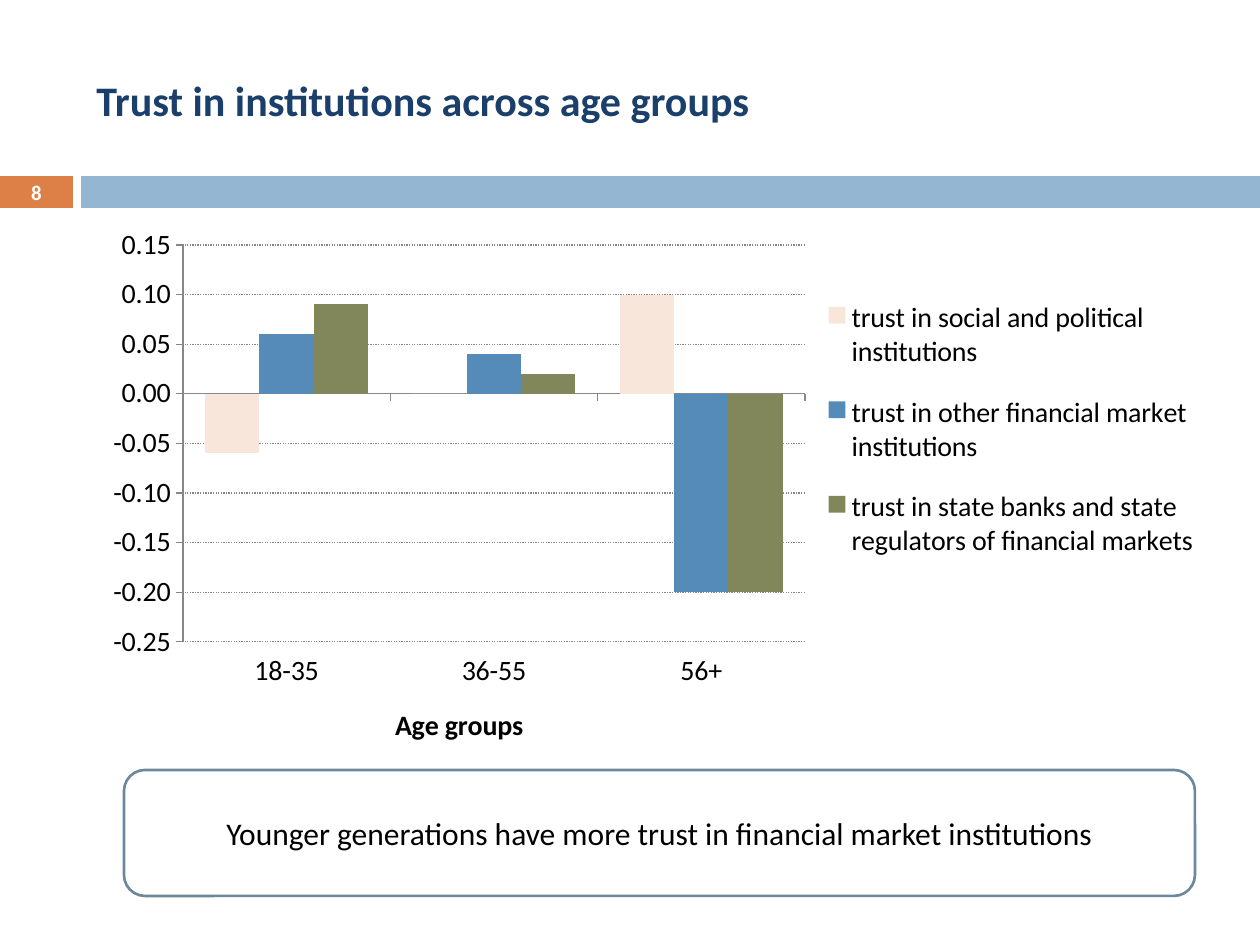
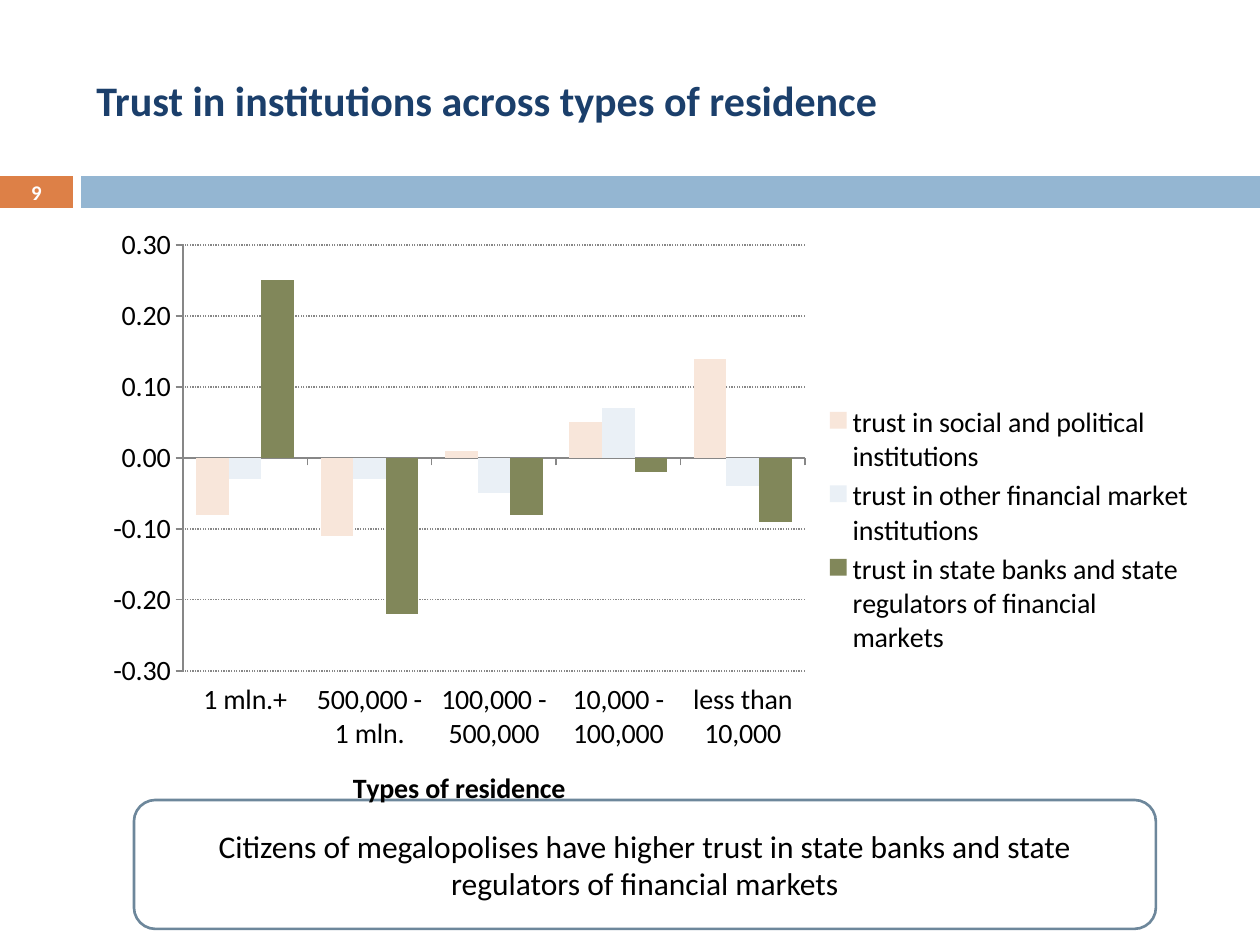
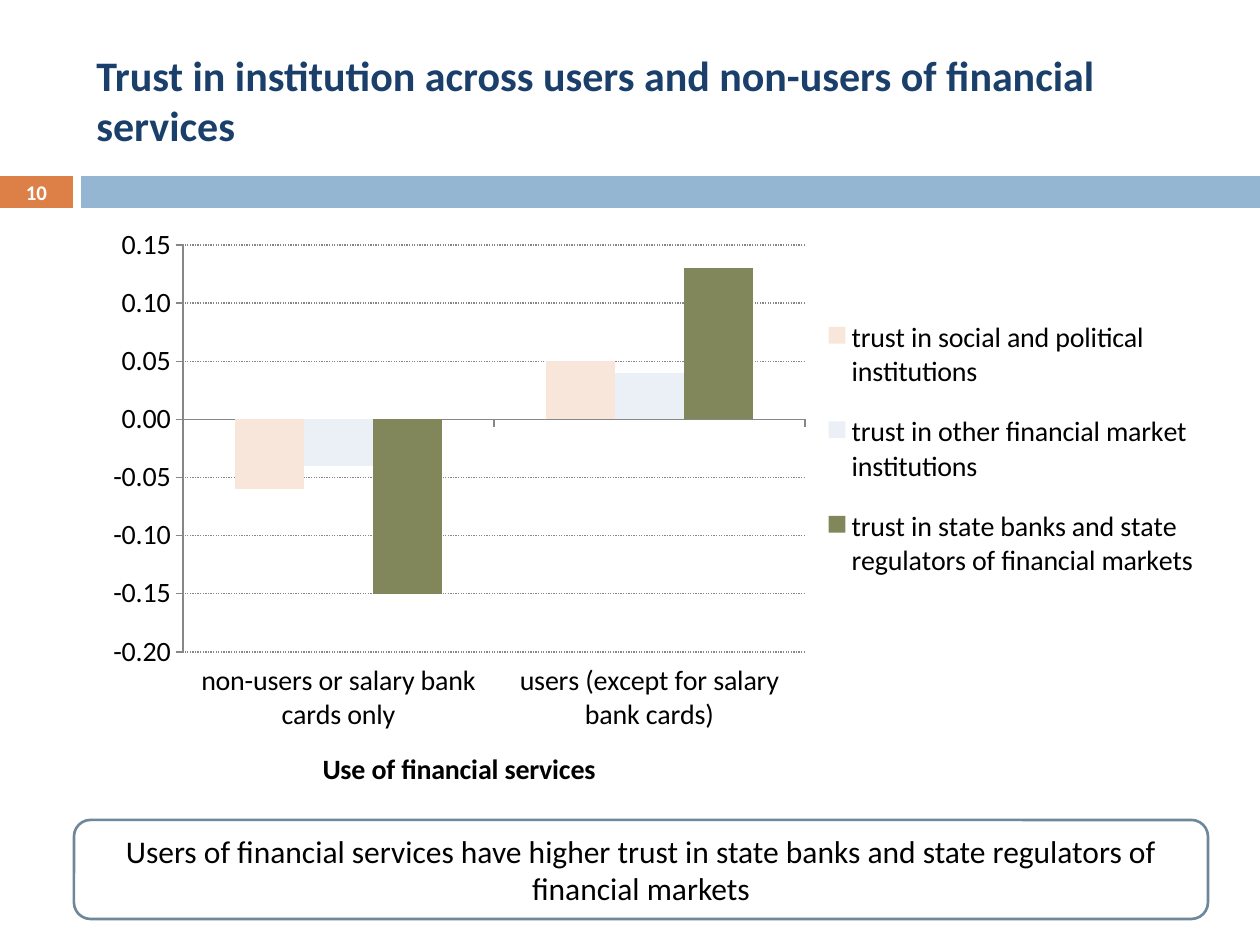
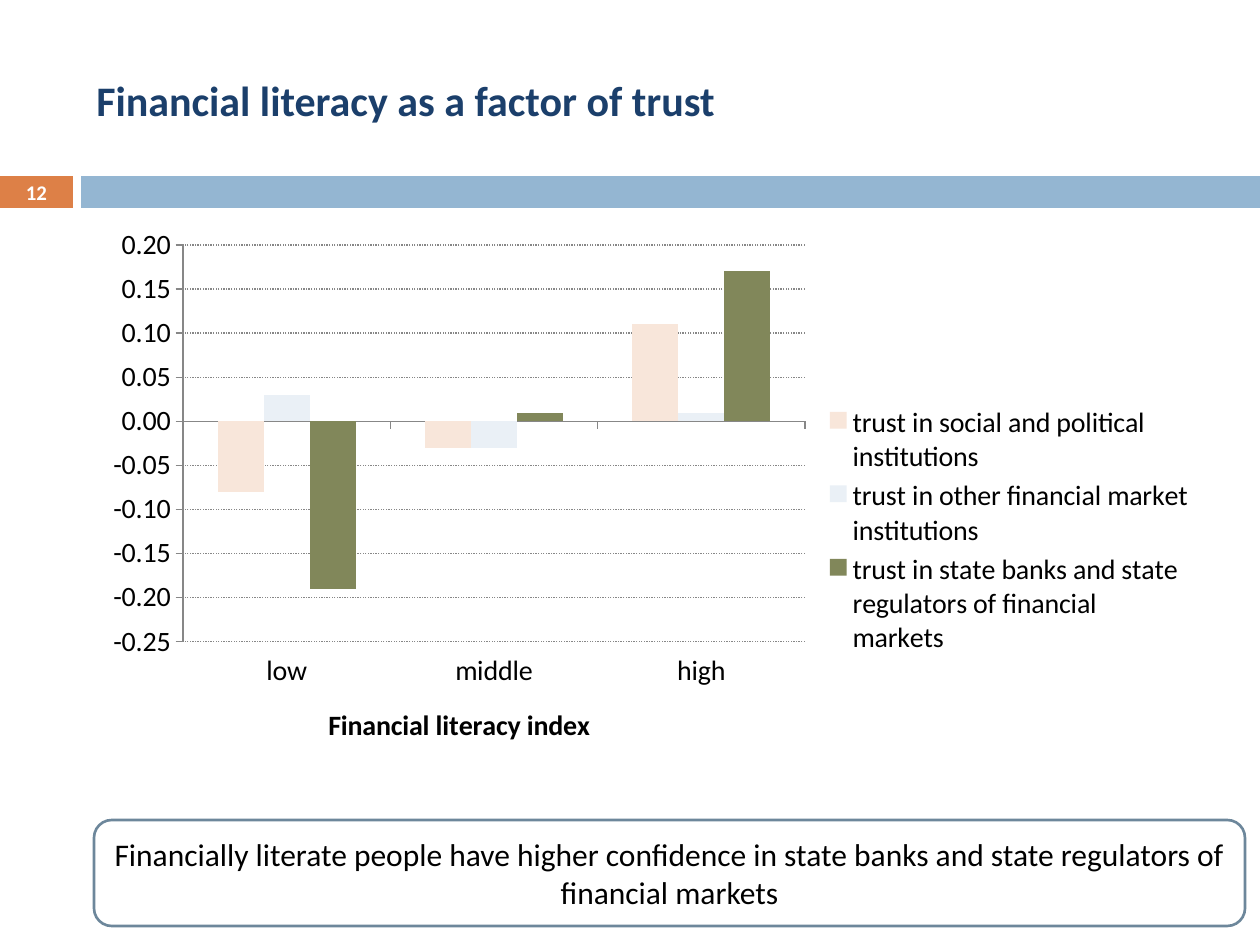
from lxml import etree
from pptx import Presentation
from pptx.chart.data import CategoryChartData
from pptx.dml.color import RGBColor
from pptx.enum.chart import XL_CHART_TYPE, XL_LEGEND_POSITION, XL_TICK_LABEL_POSITION, XL_TICK_MARK
from pptx.enum.dml import MSO_LINE
from pptx.enum.shapes import MSO_SHAPE
from pptx.enum.text import MSO_ANCHOR, PP_ALIGN
from pptx.oxml.ns import qn
from pptx.util import Emu, Pt

# Shared look
FONT = "Calibri"
NAVY, ORANGE, BAND_BLUE = "1B3F6B", "DD8047", "94B6D2"
WHITE, BLACK, FRAME, AXIS_GREY = "FFFFFF", "000000", "6D879B", "878787"
PEACH, BLUE, PALE_BLUE, OLIVE = "F8E6DA", "558BB8", "EAF0F6", "81875A"

# Places in px: left, top, width, height
PX_PER_INCH = 126
TITLE_BOX = (84, 32, 1124, 136)
NUMBER_BAND = (0, 176, 73, 32)
LONG_BAND = (81, 176, 1179, 32)
CHART_BOX = (84, 221, 1124, 620)
PLOT_LEFT, PLOT_TOP, PLOT_WIDTH = 99, 24, 622  # inside the chart

TRUST_KINDS = [
    "trust in social and political institutions",
    "trust in other financial market institutions",
    "trust in state banks and state regulators of financial markets",
]

# Content: plot_height and legend are px inside the chart; scale is min, max, step
SLIDES = [
    dict(
        number=8,
        title="Trust in institutions across age groups",
        finding="Younger generations have more trust in financial market institutions",
        finding_box=(124, 770, 1071, 126),
        axis_title="Age groups",
        groups=["18-35", "36-55", "56+"],
        trust=[(-0.06, 0, 0.1), (0.06, 0.04, -0.2), (0.09, 0.02, -0.2)],
        colors=(PEACH, BLUE, OLIVE),
        scale=(-0.25, 0.15, 0.05), gap=82, plot_height=397, legend=(734, 54, 386, 310),
    ),
    dict(
        number=9,
        title="Trust in institutions across types of residence",
        finding="Citizens of megalopolises have higher trust in state banks and state "
                "regulators of financial markets",
        finding_box=(134, 800, 1022, 129),
        axis_title="Types of residence",
        groups=["1 mln.+", "500,000 - 1 mln.", "100,000 - 500,000",
                "10,000 - 100,000", "less than 10,000"],
        trust=[(-0.08, -0.11, 0.01, 0.05, 0.14), (-0.03, -0.03, -0.05, 0.07, -0.04),
               (0.25, -0.22, -0.08, -0.02, -0.09)],
        colors=(PEACH, PALE_BLUE, OLIVE),
        scale=(-0.3, 0.3, 0.1), gap=82, plot_height=426, legend=(745, 180, 360, 260),
    ),
    dict(
        number=10,
        title="Trust in institution across users and non-users of financial services",
        finding="Users of financial services have higher trust in state banks and state "
                "regulators of financial markets",
        finding_box=(74, 820, 1134, 99),
        axis_title="Use of financial services",
        groups=["non-users or salary bank cards only", "users (except for salary bank cards)"],
        trust=[(-0.06, 0.05), (-0.04, 0.04), (-0.15, 0.13)],
        colors=(PEACH, PALE_BLUE, OLIVE),
        scale=(-0.2, 0.15, 0.05), gap=150, plot_height=407, legend=(734, 74, 386, 310),
    ),
    dict(
        number=12,
        title="Financial literacy as a factor of trust",
        finding="Financially literate people have higher confidence in state banks and state "
                "regulators of financial markets",
        finding_box=(94, 820, 1151, 106),
        axis_title="Financial literacy index",
        groups=["low", "middle", "high"],
        trust=[(-0.08, -0.03, 0.11), (0.03, -0.03, 0.01), (-0.19, 0.01, 0.17)],
        colors=(PEACH, PALE_BLUE, OLIVE),
        scale=(-0.25, 0.2, 0.05), gap=150, plot_height=397, legend=(745, 180, 360, 260),
    ),
]


def emu(px):
    return Emu(round(px * 914400 / PX_PER_INCH))


def place(box):
    return [emu(length) for length in box]


def rgb(color):
    return RGBColor.from_string(color)


def set_font(font, size, color=BLACK, bold=False):
    for key, value in dict(name=FONT, size=Pt(size), bold=bold).items():
        setattr(font, key, value)
    font.color.rgb = rgb(color)


def set_line(line, color, width):
    line.color.rgb = rgb(color)
    line.width = Pt(width)


def write(shape, text, size, color, bold=False, align=PP_ALIGN.CENTER):
    frame = shape.text_frame
    frame.word_wrap = True
    frame.vertical_anchor = MSO_ANCHOR.MIDDLE
    paragraph = frame.paragraphs[0]
    paragraph.alignment = align
    run = paragraph.add_run()
    run.text = text
    set_font(run.font, size, color, bold)


def add_panel(slide, kind, box, fill=None, outline=None):
    panel = slide.shapes.add_shape(kind, *place(box))
    panel.shadow.inherit = False
    if fill:
        panel.fill.solid()
        panel.fill.fore_color.rgb = rgb(fill)
    else:
        panel.fill.background()
    if outline:
        set_line(panel.line, outline, 1.5)
    else:
        panel.line.fill.background()
    return panel


def set_layout(element, index, box, inner=False):
    """Fix a chart part at a px box measured inside the chart."""
    for old in element.findall(qn("c:layout")):
        element.remove(old)
    layout = etree.Element(qn("c:layout"))
    manual = etree.SubElement(layout, qn("c:manualLayout"))
    left, top, width, height = box
    chart_width, chart_height = CHART_BOX[2:]
    settings = [("layoutTarget", "inner")] if inner else []
    settings += [("xMode", "edge"), ("yMode", "edge"),
                 ("x", left / chart_width), ("y", top / chart_height),
                 ("w", width / chart_width), ("h", height / chart_height)]
    for tag, value in settings:
        etree.SubElement(manual, qn("c:" + tag)).set("val", str(value))
    element.insert(index, layout)


def add_trust_chart(slide, content):
    data = CategoryChartData(number_format="0.00")
    data.categories = content["groups"]
    for kind, values in zip(TRUST_KINDS, content["trust"]):
        data.add_series(kind, values)
    chart = slide.shapes.add_chart(
        XL_CHART_TYPE.COLUMN_CLUSTERED, *place(CHART_BOX), data).chart
    chart.has_title = False
    set_font(chart.font, 16)

    # Columns
    plot = chart.plots[0]
    for key, value in dict(gap_width=content["gap"], overlap=0, vary_by_categories=False).items():
        setattr(plot, key, value)
    for series, color in zip(plot.series, content["colors"]):
        series.invert_if_negative = False
        series.format.fill.solid()
        series.format.fill.fore_color.rgb = rgb(color)

    # Axes
    groups, trust = chart.category_axis, chart.value_axis
    for axis in (groups, trust):
        axis.major_tick_mark = XL_TICK_MARK.OUTSIDE
        axis.minor_tick_mark = XL_TICK_MARK.NONE
        set_line(axis.format.line, AXIS_GREY, 0.75)
        set_font(axis.tick_labels.font, 16)
    groups.tick_label_position = XL_TICK_LABEL_POSITION.LOW
    heading = groups.axis_title.text_frame.paragraphs[0].add_run()
    heading.text = content["axis_title"]
    set_font(heading.font, 16, bold=True)
    trust.minimum_scale, trust.maximum_scale, trust.major_unit = content["scale"]
    trust.tick_labels.number_format = "0.00"
    trust.tick_labels.number_format_is_linked = False
    trust.has_major_gridlines = True
    gridline = trust.major_gridlines.format.line
    set_line(gridline, AXIS_GREY, 0.75)
    gridline.dash_style = MSO_LINE.ROUND_DOT

    # Legend and plot area
    chart.has_legend = True
    legend = chart.legend
    legend.position = XL_LEGEND_POSITION.RIGHT
    legend.include_in_layout = False
    set_font(legend.font, 16)
    set_layout(legend._element, 1, content["legend"])
    plot_box = (PLOT_LEFT, PLOT_TOP, PLOT_WIDTH, content["plot_height"])
    set_layout(chart._chartSpace.chart.plotArea, 0, plot_box, inner=True)


def add_trust_slide(deck, content):
    slide = deck.slides.add_slide(deck.slide_layouts[6])
    # Header
    number = add_panel(slide, MSO_SHAPE.RECTANGLE, NUMBER_BAND, ORANGE)
    for side in ("left", "top", "right", "bottom"):
        setattr(number.text_frame, "margin_" + side, 0)
    write(number, str(content["number"]), 11.9, WHITE, bold=True)
    add_panel(slide, MSO_SHAPE.RECTANGLE, LONG_BAND, BAND_BLUE)
    title = slide.shapes.add_textbox(*place(TITLE_BOX))
    write(title, content["title"], 24, NAVY, bold=True, align=PP_ALIGN.LEFT)
    # Finding and chart
    finding = add_panel(slide, MSO_SHAPE.ROUNDED_RECTANGLE, content["finding_box"], outline=FRAME)
    write(finding, content["finding"], 18, BLACK)
    add_trust_chart(slide, content)


def main():
    deck = Presentation()
    deck.slide_width, deck.slide_height = emu(1260), emu(945)
    for content in SLIDES:
        add_trust_slide(deck, content)
    deck.save("out.pptx")


if __name__ == "__main__":
    main()
